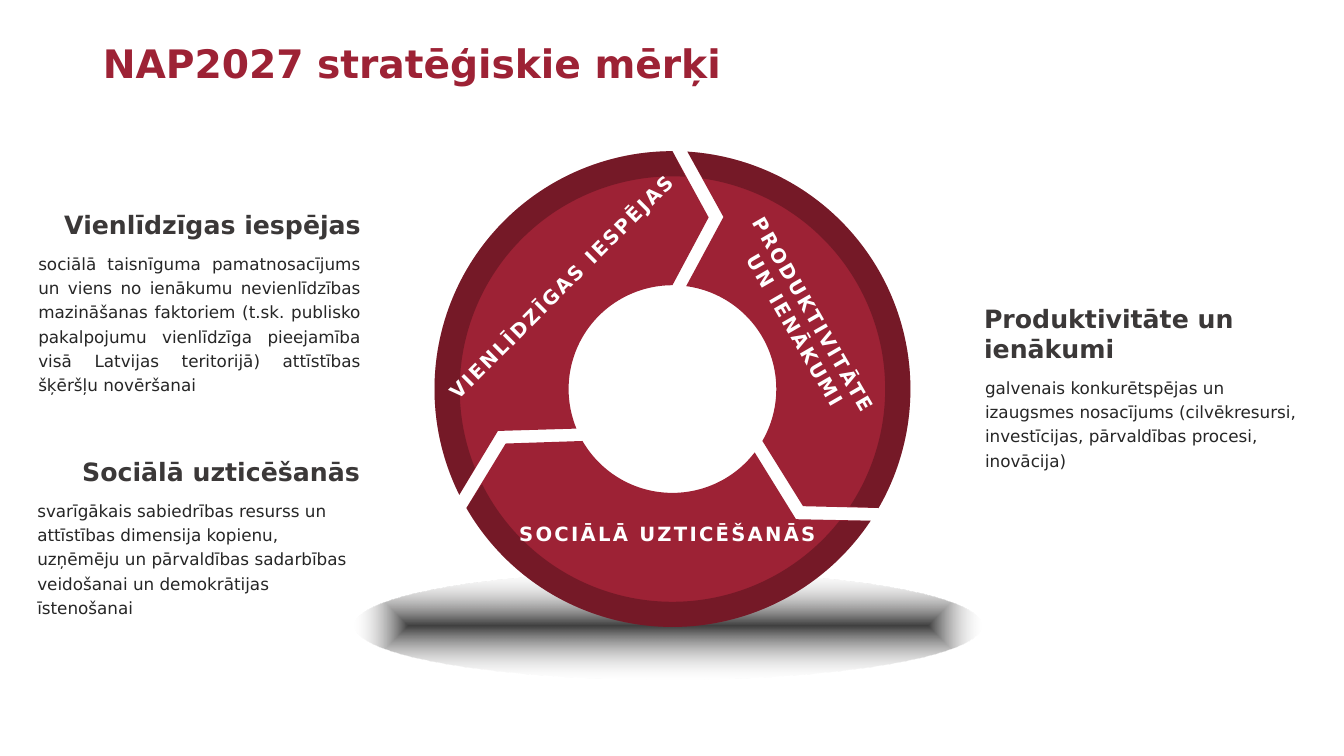
import math
from dataclasses import dataclass

import lxml.etree
import pptx
import pptx.dml.color
import pptx.enum.shapes
import pptx.enum.text
import pptx.oxml
import pptx.oxml.ns
import pptx.util

Inches = pptx.util.Inches
Pt = pptx.util.Pt
RGBColor = pptx.dml.color.RGBColor
Align = pptx.enum.text.PP_ALIGN
Anchor = pptx.enum.text.MSO_ANCHOR
AutoSize = pptx.enum.text.MSO_AUTO_SIZE
qn = pptx.oxml.ns.qn


@dataclass(frozen=True)
class Theme:
    font: str = "DejaVu Sans"
    red: RGBColor = RGBColor(0x9D, 0x22, 0x35)
    black: RGBColor = RGBColor(0, 0, 0)
    white: RGBColor = RGBColor(255, 255, 255)
    heading: RGBColor = RGBColor(0x3B, 0x38, 0x38)
    body: RGBColor = RGBColor(0x26, 0x26, 0x26)
    shadow_core: str = "404040"
    shadow_edge: str = "E7E6E6"
    title_size: int = 28
    heading_size: int = 18
    label_size: int = 14
    body_size: int = 12


THEME = Theme()

# Ring geometry: radii in inches, angles in degrees clockwise from the top
OUTER, RIM, INNER = 2.36, 2.11, 1.03
STEP = 120
SEGMENT = [(OUTER, 3.6), (OUTER, STEP), (1.74, STEP + 11.9),
           (INNER, STEP), (INNER, 7.6), (1.78, 16.5)]
SEGMENT_RIM = [(OUTER, 3.6), (OUTER, STEP), (RIM, STEP + 3.5), (RIM, 8.2)]


def set_values(target, values):
    for name, value in values.items():
        setattr(target, name, value)


def write_text(shape, lines, size, color, bold=True, frame=None, layout=None):
    """Fill a shape with one paragraph per line and return the runs."""
    text_frame = shape.text_frame
    set_values(text_frame, frame or {})
    runs = []
    for index, line in enumerate(lines):
        paragraph = text_frame.paragraphs[0] if index == 0 else text_frame.add_paragraph()
        set_values(paragraph, layout or {})
        run = paragraph.add_run()
        run.text = line
        set_values(run.font, {"name": THEME.font, "size": Pt(size), "bold": bold})
        run.font.color.rgb = color
        runs.append(run)
    return runs


def add_title(slide, left, top, width, height):
    title = slide.shapes.title
    set_values(title, {"left": Inches(left), "top": Inches(top),
                       "width": Inches(width), "height": Inches(height)})
    write_text(title, ["NAP2027 stratēģiskie mērķi"], THEME.title_size, THEME.red,
               frame={"vertical_anchor": Anchor.TOP, "auto_size": AutoSize.NONE},
               layout={"alignment": Align.LEFT, "line_spacing": 0.9})


def add_floor_shadow(slide, left, top, width, height):
    ellipse = slide.shapes.add_shape(pptx.enum.shapes.MSO_SHAPE.OVAL, Inches(left),
                                     Inches(top), Inches(width), Inches(height))
    ellipse.shadow.inherit = False
    ellipse.line.fill.background()
    ellipse.fill.background()
    gradient = pptx.oxml.parse_xml(
        f'<a:gradFill {pptx.oxml.ns.nsdecls("a")}><a:gsLst>'
        f'<a:gs pos="0"><a:srgbClr val="{THEME.shadow_core}"/></a:gs>'
        f'<a:gs pos="100000"><a:srgbClr val="{THEME.shadow_edge}">'
        '<a:alpha val="0"/></a:srgbClr></a:gs></a:gsLst>'
        '<a:path path="shape">'
        '<a:fillToRect l="50000" t="50000" r="50000" b="50000"/></a:path></a:gradFill>')
    properties = ellipse.element.spPr
    properties.replace(properties.find(qn("a:noFill")), gradient)


def split_arcs(points):
    """Add the quarter points of each arc, so that the outline's box is exact."""
    result = points[:1]
    for (_, start), (radius, end) in zip(points, points[1:]):
        if radius == result[-1][0]:
            low, high = sorted((start, end))
            quarters = [(radius, angle) for angle in range(0, 720, 90) if low < angle < high]
            result += quarters if start < end else quarters[::-1]
        result.append((radius, end))
    return result


def add_outline(shapes, center, points, color, opacity=None):
    """Draw a closed outline; neighbours of equal radius are joined by an arc."""
    points = split_arcs(points)
    corners = []
    for radius, angle in points:
        turn = math.radians(angle)
        corners.append((Inches(center[0] + radius * math.sin(turn)),
                        Inches(center[1] - radius * math.cos(turn))))
    builder = shapes.build_freeform(*corners[0], scale=1.0)
    builder.add_line_segments(corners[1:], close=True)
    shape = builder.convert_to_shape()
    lines = list(shape.element.spPr.iter(qn("a:lnTo")))
    for line, (radius, start), (end_radius, end) in zip(lines, points, points[1:]):
        if radius == end_radius:
            curve = lxml.etree.Element(qn("a:arcTo"))
            values = {"wR": Inches(radius), "hR": Inches(radius),
                      "stAng": round((start - 90) % 360 * 60000),
                      "swAng": round((end - start) * 60000)}
            for name, value in values.items():
                curve.set(name, str(int(value)))
            line.getparent().replace(line, curve)
    shape.shadow.inherit = False
    shape.line.fill.background()
    shape.fill.solid()
    shape.fill.fore_color.rgb = color
    if opacity is not None:
        color_element = shape.element.spPr.find(qn("a:solidFill"))[0]
        lxml.etree.SubElement(color_element, qn("a:alpha")).set("val", str(opacity * 1000))


def add_ring(slide, left, top):
    """Three arrow segments, then a darker rim over each."""
    center = (left + OUTER, top + OUTER)
    shapes = slide.shapes.add_group_shape().shapes
    for points, color, opacity in ((SEGMENT, THEME.red, None),
                                   (SEGMENT_RIM, THEME.black, 25)):
        for turn in range(0, 360, STEP):
            turned = [(radius, angle + turn) for radius, angle in points]
            add_outline(shapes, center, turned, color, opacity)


def add_ring_label(slide, left, top, width, height, rotation, lines):
    label = slide.shapes.add_textbox(Inches(left), Inches(top), Inches(width), Inches(height))
    label.rotation = rotation
    runs = write_text(label, lines, THEME.label_size, THEME.white,
                      frame={"word_wrap": False, "auto_size": AutoSize.SHAPE_TO_FIT_TEXT},
                      layout={"alignment": Align.CENTER})
    for run in runs:
        run.font._element.set("spc", "160")


def add_caption(slide, left, top, heading_height, body_height, heading, body,
                heading_align, body_align):
    """A bold heading with its explanation directly below."""
    shapes = slide.shapes.add_group_shape().shapes
    frame = {"word_wrap": True, "margin_left": 0, "margin_right": 0,
             "auto_size": AutoSize.SHAPE_TO_FIT_TEXT}
    heading_box = shapes.add_textbox(Inches(left), Inches(top),
                                     Inches(3.21), Inches(heading_height))
    write_text(heading_box, [heading], THEME.heading_size, THEME.heading,
               frame={**frame, "vertical_anchor": Anchor.BOTTOM},
               layout={"alignment": heading_align})
    body_box = shapes.add_textbox(Inches(left + 0.01), Inches(top + heading_height),
                                  Inches(3.2), Inches(body_height))
    write_text(body_box, [body], THEME.body_size, THEME.body, bold=False, frame=frame,
               layout={"alignment": body_align, "line_spacing": 1.2})


def main():
    presentation = pptx.Presentation()
    set_values(presentation, {"slide_width": Inches(13.33), "slide_height": Inches(7.5)})
    slide = presentation.slides.add_slide(presentation.slide_layouts[5])

    add_title(slide, 0.92, 0.39, 11.5, 0.81)
    add_floor_shadow(slide, 3.52, 5.67, 6.21, 1.07)
    add_ring(slide, 4.31, 1.5)

    # Captions beside the ring
    add_caption(slide, 9.76, 2.95, 0.71, 1.04, "Produktivitāte un ienākumi",
                "galvenais konkurētspējas un izaugsmes nosacījums (cilvēkresursi, "
                "investīcijas, pārvaldības procesi, inovācija)", Align.LEFT, Align.LEFT)
    add_caption(slide, 0.36, 4.48, 0.4, 1.29, "Sociālā uzticēšanās",
                "svarīgākais sabiedrības resurss un attīstības dimensija kopienu, "
                "uzņēmēju un pārvaldības sadarbības veidošanai un demokrātijas "
                "īstenošanai", Align.RIGHT, Align.LEFT)
    add_caption(slide, 0.37, 2.03, 0.4, 1.56, "Vienlīdzīgas iespējas",
                "sociālā taisnīguma pamatnosacījums un viens no ienākumu nevienlīdzības "
                "mazināšanas faktoriem (t.sk. publisko pakalpojumu vienlīdzīga pieejamība "
                "visā Latvijas teritorijā) attīstības šķēršļu novēršanai",
                Align.RIGHT, Align.JUSTIFY)

    # Labels on the ring
    add_ring_label(slide, 3.84, 2.68, 3.45, 0.34, 315, ["VIENLĪDZĪGAS IESPĒJAS"])
    add_ring_label(slide, 5, 5.13, 3.24, 0.34, 0, ["SOCIĀLĀ UZTICĒŠANĀS"])
    add_ring_label(slide, 6.69, 2.93, 2.59, 0.57, 60, ["PRODUKTIVITĀTE ", "UN IENĀKUMI"])

    presentation.save("out.pptx")


if __name__ == "__main__":
    main()
